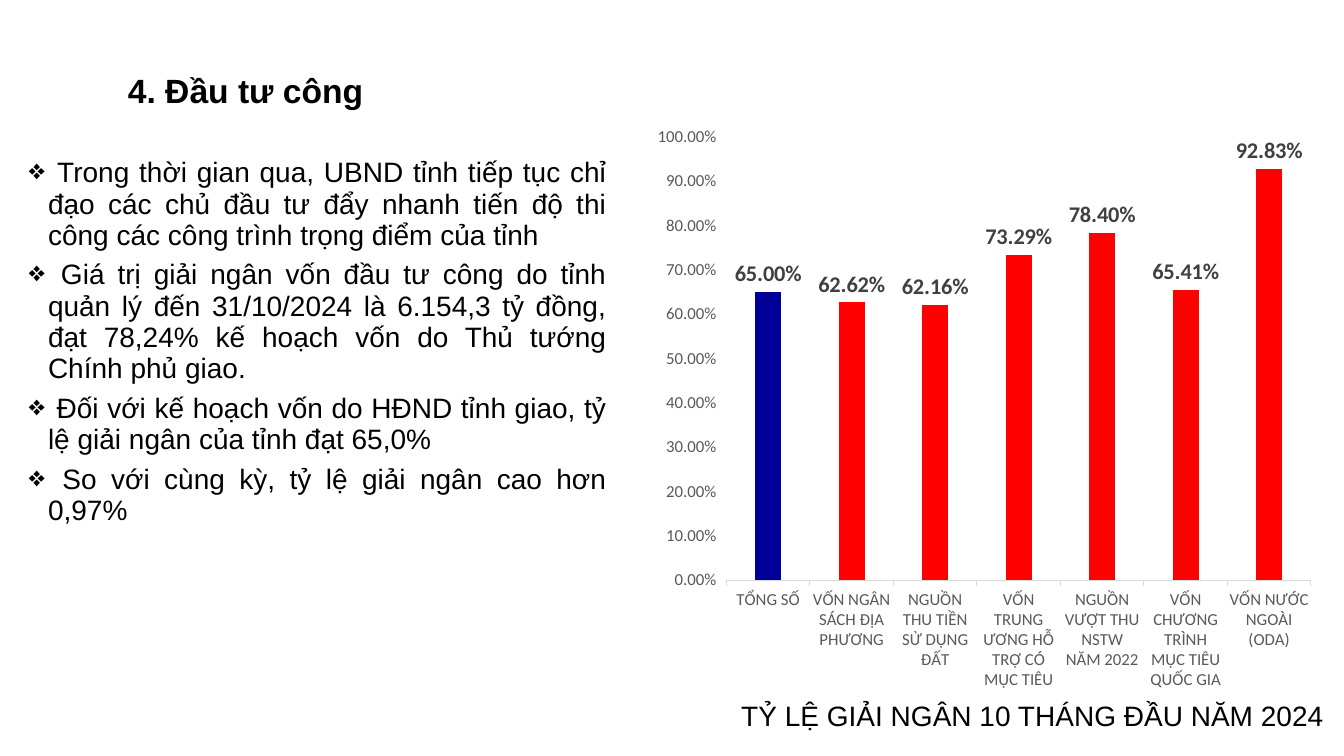
import pptx
import pptx.util
import pptx.chart.data
import pptx.dml.color
import pptx.enum.chart
import pptx.enum.text
from lxml import etree

Cm, Pt = pptx.util.Cm, pptx.util.Pt
align = pptx.enum.text.PP_ALIGN
anchor = pptx.enum.text.MSO_ANCHOR
marks = pptx.enum.chart

points = [
    " Trong thời gian qua, UBND tỉnh tiếp tục chỉ đạo các chủ đầu tư đẩy nhanh tiến độ thi công các công trình trọng điểm của tỉnh",
    " Giá trị giải ngân vốn đầu tư công do tỉnh quản lý đến 31/10/2024 là 6.154,3 tỷ đồng, đạt 78,24% kế hoạch vốn do Thủ tướng Chính phủ giao.",
    " Đối với kế hoạch vốn do HĐND tỉnh giao, tỷ lệ giải ngân của tỉnh đạt 65,0%",
    " So với cùng kỳ, tỷ lệ giải ngân cao hơn 0,97%",
]
rates = {
    "TỔNG SỐ": 0.65,
    "VỐN NGÂN SÁCH ĐỊA PHƯƠNG": 0.6262,
    "NGUỒN THU TIỀN SỬ DỤNG ĐẤT": 0.6216,
    "VỐN TRUNG ƯƠNG HỖ TRỢ CÓ MỤC TIÊU": 0.7329,
    "NGUỒN VƯỢT THU NSTW NĂM 2022": 0.784,
    "VỐN CHƯƠNG TRÌNH MỤC TIÊU QUỐC GIA": 0.6541,
    "VỐN NƯỚC NGOÀI (ODA)": 0.9283,
}


def color(code):
    return pptx.dml.color.RGBColor.from_string(code)


class Deck:
    text = "Arial"
    label = "Calibri"
    black, gray, dark, rule = "000000", "595959", "404040", "D9D9D9"
    red, navy = "FF0000", "000099"

    def __init__(self):
        self.file = pptx.Presentation()
        self.file.slide_width = Cm(33.87)
        self.file.slide_height = Cm(19.05)
        self.slide = self.file.slides.add_slide(self.file.slide_layouts[5])

    def style(self, font, name, size, code, bold=False):
        font.name = name
        font.size = Pt(size)
        font.bold = bold
        font.color.rgb = color(code)

    def title(self, words, *box):
        shape = self.slide.shapes.title
        shape.left, shape.top, shape.width, shape.height = map(Cm, box)
        frame = shape.text_frame
        frame.text = words
        frame.auto_size = pptx.enum.text.MSO_AUTO_SIZE.NONE
        frame.vertical_anchor = anchor.TOP
        para = frame.paragraphs[0]
        para.alignment = align.LEFT
        self.style(para.font, self.text, 24, self.black, True)

    def bullet(self, para, sign):
        props = para._p.get_or_add_pPr()
        props.set("marL", str(Cm(0.48)))
        props.set("indent", str(-Cm(0.48)))
        mark = etree.SubElement(props, pptx.oxml.ns.qn("a:buChar"))
        mark.set("char", sign)

    def table(self, lines, *box, sign=None, inset=0.25):
        table = self.slide.shapes.add_table(1, 1, *map(Cm, box)).table
        table.first_row = table.horz_banding = False
        cell = table.cell(0, 0)
        cell.fill.background()
        cell.margin_left = Cm(inset)
        cell.vertical_anchor = anchor.MIDDLE
        cell.text = "\n".join(lines)
        for para in cell.text_frame.paragraphs:
            para.alignment = align.JUSTIFY
            para.space_after = Pt(6)
            if sign:
                self.bullet(para, sign)
            self.style(para.font, self.text, 20, self.black)

    def chart(self, values, *box):
        data = pptx.chart.data.CategoryChartData(number_format="0.00%")
        data.categories = list(values)
        data.add_series("Series 1", list(values.values()))
        kind = marks.XL_CHART_TYPE.COLUMN_CLUSTERED
        chart = self.slide.shapes.add_chart(kind, *map(Cm, box), data).chart
        chart.has_legend = chart.has_title = False
        self.style(chart.font, self.label, 10, self.black)
        for axis in (chart.category_axis, chart.value_axis):
            axis.has_major_gridlines = False
            axis.major_tick_mark = marks.XL_TICK_MARK.OUTSIDE
            self.style(axis.tick_labels.font, self.label, 12, self.gray)
        line = chart.category_axis.format.line
        line.color.rgb = color(self.rule)
        line.width = Pt(0.75)
        scale = chart.value_axis
        scale.minimum_scale, scale.maximum_scale, scale.major_unit = 0, 1, 0.1
        scale.tick_labels.number_format = "0.00%"
        scale.tick_labels.number_format_is_linked = False
        scale.format.line.fill.background()
        plot = chart.plots[0]
        plot.gap_width, plot.overlap = 219, -27
        plot.vary_by_categories = False
        bars = plot.series[0]
        bars.invert_if_negative = False
        for item, code in ((bars, self.red), (bars.points[0], self.navy)):
            item.format.fill.solid()
            item.format.fill.fore_color.rgb = color(code)
        labels = bars.data_labels
        labels.show_value = True
        labels.position = marks.XL_LABEL_POSITION.OUTSIDE_END
        labels.number_format = "0.00%"
        labels.number_format_is_linked = False
        self.style(labels.font, self.label, 16, self.dark, True)


deck = Deck()
deck.title("4. Đầu tư công", 2.97, 1.63, 28.96, 2.31)
deck.table(points, 0.48, 3.51, 15.06, 10.21, sign="❖")
deck.chart(rates, 16.23, 2.9, 17.15, 14.78)
deck.table(["TỶ LỆ GIẢI NGÂN 10 THÁNG ĐẦU NĂM 2024"], 18.08, 17.42, 15.75, 1.27, inset=0.6)
deck.file.save("out.pptx")
